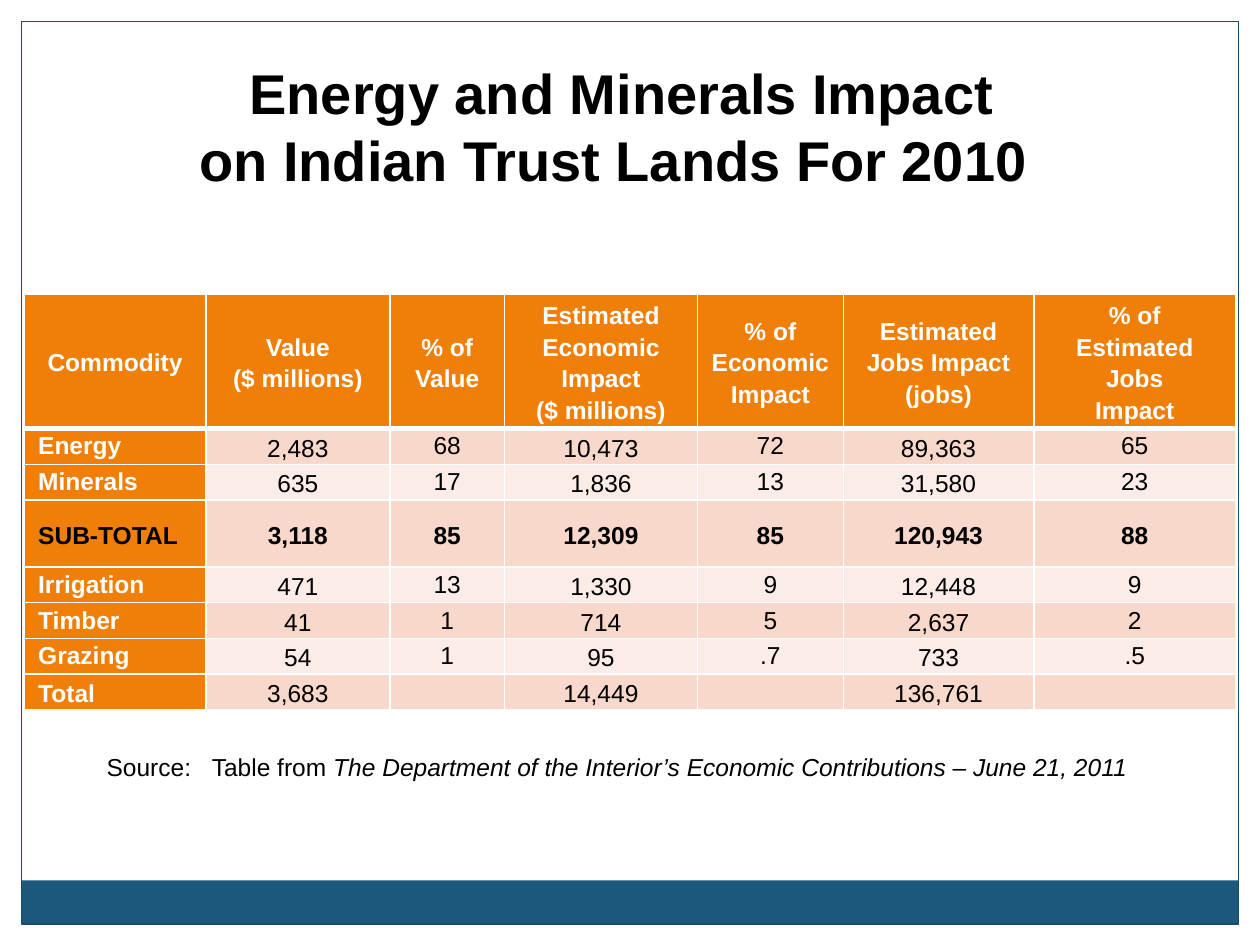
from lxml.etree import SubElement
from pptx import Presentation
from pptx.dml.color import RGBColor
from pptx.enum.shapes import MSO_SHAPE
from pptx.enum.text import MSO_ANCHOR, MSO_AUTO_SIZE, PP_ALIGN
from pptx.oxml.ns import qn
from pptx.util import Cm, Pt

COLORS = {"white": "FFFFFF", "black": "000000", "navy": "1B587C", "frame": "184E6D",
          "orange": "F07F09", "band": "F9D8CC", "light": "FCECE7"}

SLIDE_W, SLIDE_H, MARGIN = 25.4, 19.05, 0.43

HEADERS = ["Commodity", "Value\n($ millions)", "% of\nValue",
           "Estimated Economic Impact\n($ millions)", "% of\nEconomic\nImpact",
           "Estimated Jobs Impact\n(jobs)", "% of\nEstimated Jobs\nImpact"]
ROWS = [
    ["Energy", "2,483", "68", "10,473", "72", "89,363", "65"],
    ["Minerals", "635", "17", "1,836", "13", "31,580", "23"],
    ["SUB-TOTAL", "3,118", "85", "12,309", "85", "120,943", "88"],
    ["Irrigation", "471", "13", "1,330", "9", "12,448", "9"],
    ["Timber", "41", "1", "714", "5", "2,637", "2"],
    ["Grazing", "54", "1", "95", ".7", "733", ".5"],
    ["Total", "3,683", "", "14,449", "", "136,761", ""],
]
COL_WIDTHS = [3.66, 3.71, 2.31, 3.89, 2.94, 3.84, 4.07]
HEADER_HEIGHT, ROW_HEIGHT, SUBTOTAL_HEIGHT = 2.71, 0.72, 1.35


def rgb(name):
    return RGBColor.from_string(COLORS[name])


class SlideBuilder:
    font = "Arial"
    body_size = 14
    title_size = 32

    def __init__(self, prs):
        self.s = prs.slides.add_slide(prs.slide_layouts[5])

    def format_run(self, r, size, color="black", bold=False, italic=False):
        f = r.font
        f.name, f.size, f.bold, f.italic = self.font, Pt(size), bold, italic
        f.color.rgb = rgb(color)

    def place(self, sp, x, y, w, h):
        sp.left, sp.top, sp.width, sp.height = Cm(x), Cm(y), Cm(w), Cm(h)

    def rect(self, x, y, w, h, fill=None, line=None):
        sp = self.s.shapes.add_shape(MSO_SHAPE.RECTANGLE, Cm(x), Cm(y), Cm(w), Cm(h))
        sp.shadow.inherit = False
        if fill:
            sp.fill.solid()
            sp.fill.fore_color.rgb = rgb(fill)
        else:
            sp.fill.background()
        if line:
            sp.line.color.rgb = rgb(line)
            sp.line.width = Pt(0.75)
        else:
            sp.line.fill.background()

    def title(self, text, x, y, w, h, indents):
        sp = self.s.shapes.title
        self.place(sp, x, y, w, h)
        tf = sp.text_frame
        tf.text = text
        tf.word_wrap = True
        tf.auto_size = MSO_AUTO_SIZE.NONE
        tf.vertical_anchor = MSO_ANCHOR.TOP
        for p, indent in zip(tf.paragraphs, indents):
            p.alignment = PP_ALIGN.CENTER
            p._p.get_or_add_pPr().set("marL", str(Cm(indent)))
            for r in p.runs:
                self.format_run(r, self.title_size, bold=True)

    def source(self, label, citation, x, y, w, h, tab):
        sp = self.s.shapes.add_textbox(Cm(x), Cm(y), Cm(w), Cm(h))
        tf = sp.text_frame
        tf.word_wrap = True
        p = tf.paragraphs[0]
        p.text = label
        tabs = SubElement(p._p.get_or_add_pPr(), qn("a:tabLst"))
        SubElement(tabs, qn("a:tab"), pos=str(Cm(tab)), algn="l")
        for r in p.runs:
            self.format_run(r, self.body_size)
        r = p.add_run()
        r.text = citation
        self.format_run(r, self.body_size, italic=True)

    def borders(self, cell, top, bottom):
        tcPr = cell._tc.get_or_add_tcPr()
        for side, width in (("L", 1), ("R", 1), ("T", top), ("B", bottom)):
            ln = SubElement(tcPr, qn(f"a:ln{side}"), w=str(Pt(width)))
            fill = SubElement(ln, qn("a:solidFill"))
            SubElement(fill, qn("a:srgbClr"), val=COLORS["white"])

    def cell(self, cell, text, fill, color, bold, align, anchor, top=1, bottom=1):
        self.borders(cell, top, bottom)
        cell.fill.solid()
        cell.fill.fore_color.rgb = rgb(fill)
        cell.margin_left = cell.margin_right = Cm(0.28)
        cell.margin_top = cell.margin_bottom = 0
        cell.vertical_anchor = anchor
        cell.text_frame.text = text
        for p in cell.text_frame.paragraphs:
            p.alignment = align
            p.line_spacing = 1.15
            for r in p.runs:
                self.format_run(r, self.body_size, color, bold)
            if not text:
                SubElement(p._p, qn("a:endParaRPr"), sz=str(self.body_size * 100))

    def table(self, x, y):
        heights = [HEADER_HEIGHT] + [
            SUBTOTAL_HEIGHT if row[0] == "SUB-TOTAL" else ROW_HEIGHT for row in ROWS]
        frame = self.s.shapes.add_table(len(heights), len(COL_WIDTHS), Cm(x), Cm(y),
                                        Cm(sum(COL_WIDTHS)), Cm(sum(heights)))
        tbl = frame.table
        for col, width in zip(tbl.columns, COL_WIDTHS):
            col.width = Cm(width)
        for row, height in zip(tbl.rows, heights):
            row.height = Cm(height)

        # Header row
        for j, text in enumerate(HEADERS):
            self.cell(tbl.cell(0, j), text, "orange", "white", True,
                      PP_ALIGN.CENTER, MSO_ANCHOR.MIDDLE, bottom=3)

        # Body rows: banded values beside an orange label column
        for i, row in enumerate(ROWS, 1):
            subtotal = row[0] == "SUB-TOTAL"
            summary = subtotal or row[0] == "Total"
            for j, text in enumerate(row):
                label = j == 0
                fill = "orange" if label else "band" if i % 2 else "light"
                self.cell(tbl.cell(i, j), text, fill,
                          "white" if label and not subtotal else "black",
                          label or subtotal,
                          PP_ALIGN.LEFT if label else PP_ALIGN.CENTER,
                          MSO_ANCHOR.MIDDLE if summary or j % 2 else MSO_ANCHOR.TOP,
                          top=3 if i == 1 else 1)


def main():
    prs = Presentation()
    prs.slide_width, prs.slide_height = Cm(SLIDE_W), Cm(SLIDE_H)
    b = SlideBuilder(prs)

    # White margins, footer bar and frame
    b.rect(0, 0, SLIDE_W, MARGIN, fill="white")
    b.rect(SLIDE_W - MARGIN, 0, MARGIN, SLIDE_H, fill="white")
    b.rect(0, 0, MARGIN, SLIDE_H, fill="white")
    inner_w = SLIDE_W - 2 * MARGIN
    b.rect(MARGIN, 17.75, inner_w, 0.87, fill="navy")
    b.rect(MARGIN, MARGIN, inner_w, 18.2, line="frame")

    # Table and its source
    b.table(0.49, 5.93)
    b.source("Source:\tTable from", " The Department of the Interior’s Economic "
             "Contributions – June 21, 2011", 1.9, 15.04, 22.43, 0.86, tab=2.12)

    # Title, its first line slightly to the right of the second
    b.title("Energy and Minerals Impact\non Indian Trust Lands For 2010",
            0.2, 1.05, 24.34, 3, indents=(0.33, 0))

    prs.save("out.pptx")


if __name__ == "__main__":
    main()
